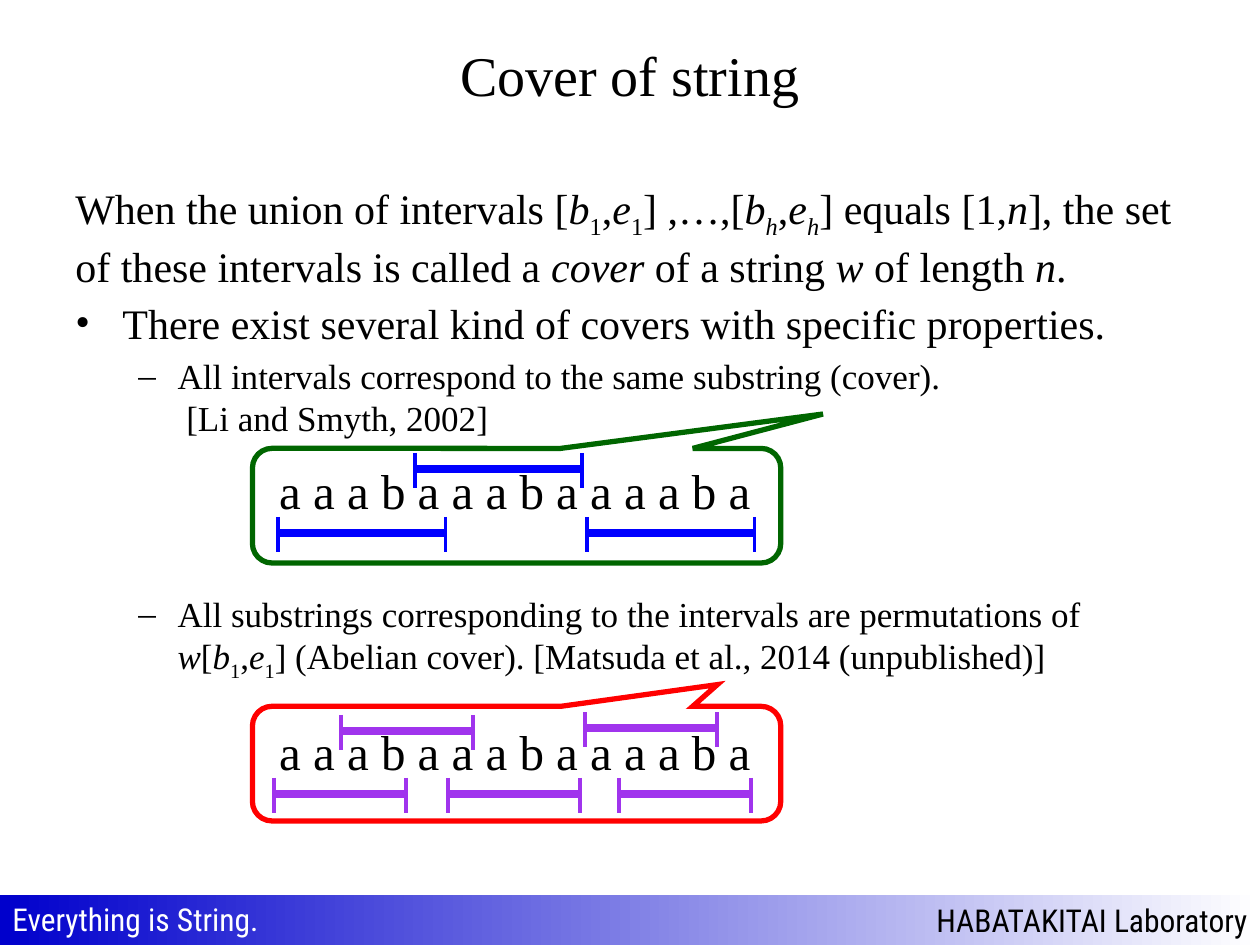
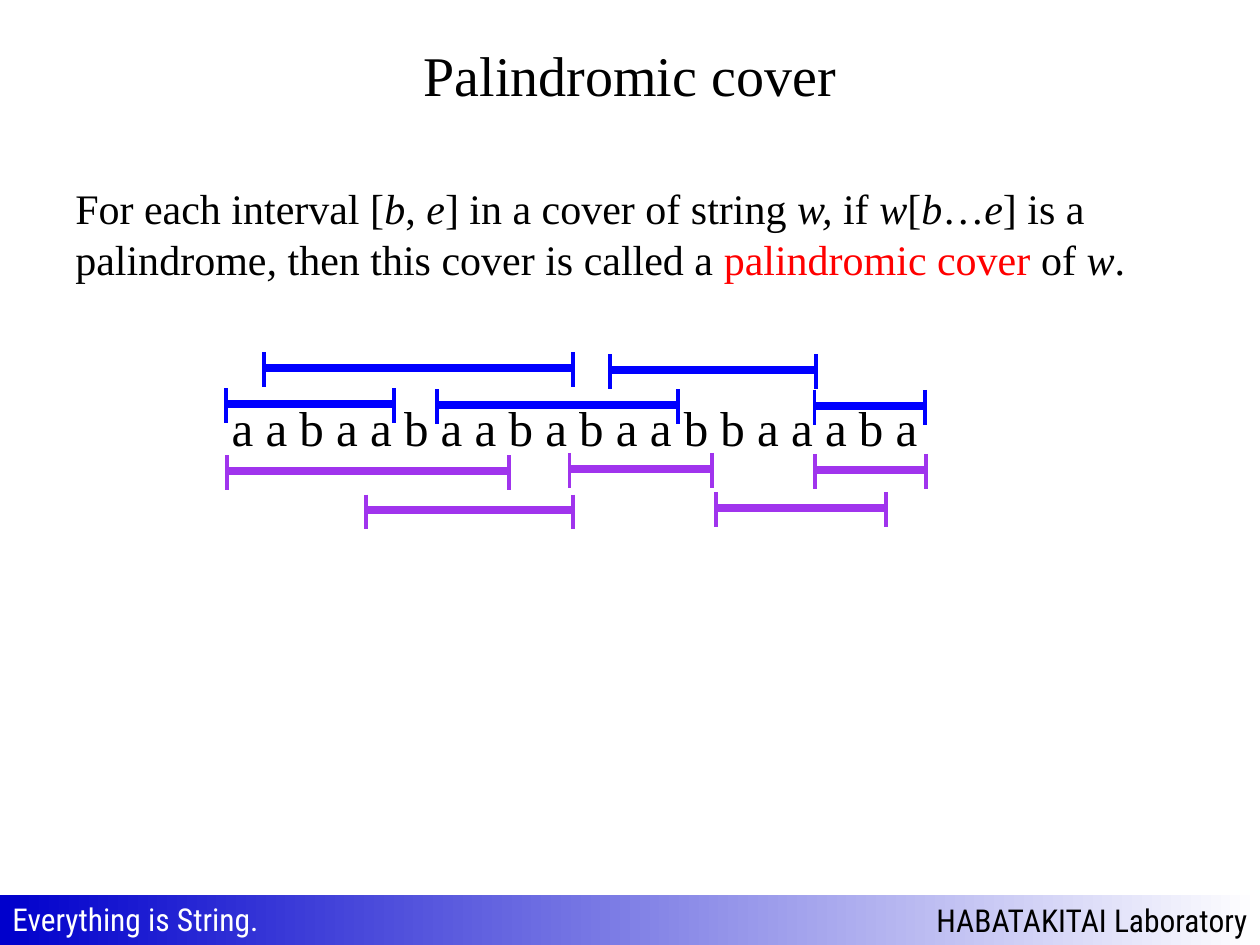
from lxml import etree
from pptx import Presentation
from pptx.dml.color import RGBColor
from pptx.enum.shapes import MSO_CONNECTOR, MSO_SHAPE
from pptx.enum.text import MSO_ANCHOR, PP_ALIGN
from pptx.oxml.ns import qn
from pptx.util import Cm, Pt

LINE = MSO_CONNECTOR.STRAIGHT
RECT = MSO_SHAPE.RECTANGLE
CALLOUT = MSO_SHAPE.ROUNDED_RECTANGULAR_CALLOUT
TOP, MIDDLE = MSO_ANCHOR.TOP, MSO_ANCHOR.MIDDLE
LEFT, CENTER, RIGHT = PP_ALIGN.LEFT, PP_ALIGN.CENTER, PP_ALIGN.RIGHT

BLACK = RGBColor(0, 0, 0)
WHITE = RGBColor(255, 255, 255)
RED = RGBColor(255, 0, 0)
GREEN = RGBColor(0, 0x66, 0)
BLUE = RGBColor(0, 0, 255)
NAVY = RGBColor(0, 0, 0xCC)
PURPLE = RGBColor(0xA0, 0x34, 0xED)

SERIF = "Times New Roman"
FOOTER_FONT = {"size": Pt(18), "name": "Roboto Condensed"}
TICK_UP, TICK_DOWN = 0.32, 0.38
COVER_LENGTH, ABELIAN_LENGTH = 3.38, 2.66

TOP_LEVEL = {"size": 24, "before": 2}
BULLET = {"size": 24, "before": 4, "bullet": "•", "indent": (0.95, -0.95)}
DASH = {"size": 20, "before": 4, "bullet": "–", "indent": (2.06, -0.79)}
LAST_DASH = {**DASH, "before": 88}

COVER_TEXT = [
    (TOP_LEVEL, [
        ("When the union of intervals [", ""), ("b", "i"), ("1", "s"), (",", ""), ("e", "i"),
        ("1", "s"), ("] ,…,[", ""), ("b", "i"), ("h", "is"), (",", ""), ("e", "i"),
        ("h", "is"), ("] equals [1,", ""), ("n", "i"),
        ("], the set of these intervals is called a ", ""), ("cover", "i"),
        (" of a string ", ""), ("w ", "i"), ("of length ", ""), ("n", "i"), (".", "")]),
    (BULLET, [("There exist several kind of covers with specific properties.", "")]),
    (DASH, [("All intervals correspond to the same substring (cover).", ""), ("\n", ""),
            (" [Li and Smyth, 2002]", "")]),
    (LAST_DASH, [
        ("All substrings corresponding to the intervals are permutations of ", ""),
        ("w", "i"), ("[", ""), ("b", "i"), ("1", "s"), (",", ""), ("e", "i"), ("1", "s"),
        ("] (Abelian cover). [Matsuda et al., 2014 (unpublished)]", "")]),
]
PALINDROME_TEXT = [
    (TOP_LEVEL, [
        ("For each interval [", ""), ("b", "i"), (", ", ""), ("e", "i"),
        ("] in a cover of string ", ""), ("w, ", "i"), ("if ", ""), ("w", "i"), ("[", ""),
        ("b", "i"), ("…", ""), ("e", "i"), ("] is a palindrome", ""), (", ", "i"),
        ("then this cover is called a ", ""), ("palindromic cover ", "r"), ("of ", ""),
        ("w", "i"), (".", "")]),
]

COVER_STARTS = [(5.6, 10.74), (8.36, 9.45), (11.83, 10.74)]
ABELIAN_STARTS = [(5.53, 16), (6.87, 14.73), (9.03, 16), (11.79, 14.68), (12.47, 16)]
BLUE_PALINDROMES = [(4.55, 7.95, 8.15), (5.32, 11.56, 7.42), (8.81, 13.67, 8.17),
                    (12.3, 16.45, 7.46), (16.42, 18.64, 8.18)]
PURPLE_PALINDROMES = [(4.57, 10.26, 9.5), (7.38, 11.56, 10.29), (11.48, 14.35, 9.45),
                      (14.44, 17.86, 10.24), (16.43, 18.66, 9.47)]


def style_font(font, color, **values):
    """Set the colour and the given attributes of a font."""
    font.color.rgb = color
    for name, value in values.items():
        setattr(font, name, value)


def add_label(s, box, text, color, align=LEFT, anchor=TOP, wrap=False, **font):
    """Add a one-line text box."""
    tf = s.shapes.add_textbox(*map(Cm, box)).text_frame
    fill_label(tf, text, color, align, anchor, wrap, **font)


def fill_label(tf, text, color, align, anchor, wrap, **font):
    """Write one line of formatted text in a text frame."""
    for name, value in {"word_wrap": wrap, "vertical_anchor": anchor}.items():
        setattr(tf, name, value)
    p = tf.paragraphs[0]
    p.alignment = align
    r = p.add_run()
    r.text = text
    style_font(r.font, color, **font)


def add_footer(s):
    """Add the gradient band with its two labels."""
    sp = s.shapes.add_shape(RECT, Cm(0), Cm(18.05), Cm(25.4), Cm(1))
    sp.shadow.inherit = False
    sp.line.fill.background()
    sp.fill.gradient()
    sp.fill.gradient_angle = 0
    for stop, color in zip(sp.fill.gradient_stops, (NAVY, WHITE)):
        stop.color.rgb = color
    fill_label(sp.text_frame, "HABATAKITAI Laboratory", BLACK, RIGHT, MIDDLE, False,
               **FOOTER_FONT)
    add_label(s, (0, 18.01, 5.64, 1.02), "Everything is String.", WHITE, **FOOTER_FONT)


def add_slide(prs, title):
    """Add a blank slide with the shared title and footer."""
    s = prs.slides.add_slide(prs.slide_layouts[6])
    add_footer(s)
    add_label(s, (1.27, 0.32, 22.86, 2.36), title, BLACK, CENTER, MIDDLE, True,
              size=Pt(32), name=SERIF)
    return s


def set_bullet(p, char, indent):
    """Give a paragraph a bullet character and a hanging indent."""
    pPr = p._p.get_or_add_pPr()
    for name, value in zip(("marL", "indent"), indent):
        pPr.set(name, str(Cm(value)))
    etree.SubElement(pPr, qn("a:buFont")).set("typeface", SERIF)
    etree.SubElement(pPr, qn("a:buChar")).set("char", char)


def add_body(s, paragraphs):
    """Add body text; run marks are i italic, s subscript, r red."""
    tf = s.shapes.add_textbox(Cm(1.27), Cm(3.56), Cm(22.86), Cm(13.46)).text_frame
    tf.word_wrap = True
    for i, (level, runs) in enumerate(paragraphs):
        p = tf.add_paragraph() if i else tf.paragraphs[0]
        p.space_before = Pt(level["before"])
        if "bullet" in level:
            set_bullet(p, level["bullet"], level["indent"])
        for text, marks in runs:
            if text == "\n":
                p.add_line_break()
                continue
            r = p.add_run()
            r.text = text
            style_font(r.font, RED if "r" in marks else BLACK, name=SERIF,
                       size=Pt(level["size"]), italic="i" in marks)
            if "s" in marks:
                r._r.get_or_add_rPr().set("baseline", "-25000")


def add_string(s, left, top, width, text):
    """Add a string whose letters are set apart by spaces."""
    add_label(s, (left, top, width, 1.45), " ".join(text), BLACK, size=Pt(28), name=SERIF)


def add_line(s, x1, y1, x2, y2, color, width):
    """Add a straight line without shadow."""
    line = s.shapes.add_connector(LINE, Cm(x1), Cm(y1), Cm(x2), Cm(y2))
    line.line.color.rgb = color
    line.line.width = Pt(width)
    etree.SubElement(line._element.spPr, qn("a:effectLst"))


def add_interval(s, start, end, y, color):
    """Add a bar with a tick at each end."""
    add_line(s, start, y, end, y, color, 4.5)
    for x in (start, end):
        add_line(s, x, y - TICK_UP, x, y + TICK_DOWN, color, 2.25)


def add_callout(s, top, color, tip):
    """Add an unfilled rounded callout that points at tip."""
    sp = s.shapes.add_shape(CALLOUT, Cm(5.09), Cm(top), Cm(10.65), Cm(2.31))
    sp.shadow.inherit = False
    sp.fill.background()
    sp.line.color.rgb = color
    sp.line.width = Pt(3)
    etree.SubElement(sp.line._get_or_add_ln(), qn("a:miter")).set("lim", "800000")
    for i, value in enumerate((*tip, 0.17)):
        sp.adjustments[i] = value


def add_example(s, top, string_top, starts, length, color, frame_color, tip):
    """Add a framed string with intervals of equal length."""
    add_string(s, 5.38, string_top, 10.11, "aaabaaabaaaaba")
    for start, y in starts:
        add_interval(s, start, start + length, y, color)
    add_callout(s, top, frame_color, tip)


def main():
    """Build both slides and save the file."""
    prs = Presentation()
    prs.slide_width, prs.slide_height = Cm(25.4), Cm(19.05)

    s = add_slide(prs, "Cover of string")
    add_body(s, COVER_TEXT)
    add_example(s, 14.24, 14.43, ABELIAN_STARTS, ABELIAN_LENGTH, PURPLE, RED, (0.38, -0.69))
    add_example(s, 9.04, 9.16, COVER_STARTS, COVER_LENGTH, BLUE, GREEN, (0.58, -0.8))

    s = add_slide(prs, "Palindromic cover")
    add_body(s, PALINDROME_TEXT)
    add_string(s, 4.42, 7.88, 15.06, "aabaabaababaabbaaaba")
    for color, intervals in ((BLUE, BLUE_PALINDROMES), (PURPLE, PURPLE_PALINDROMES)):
        for interval in intervals:
            add_interval(s, *interval, color)

    prs.save("out.pptx")


if __name__ == "__main__":
    main()
